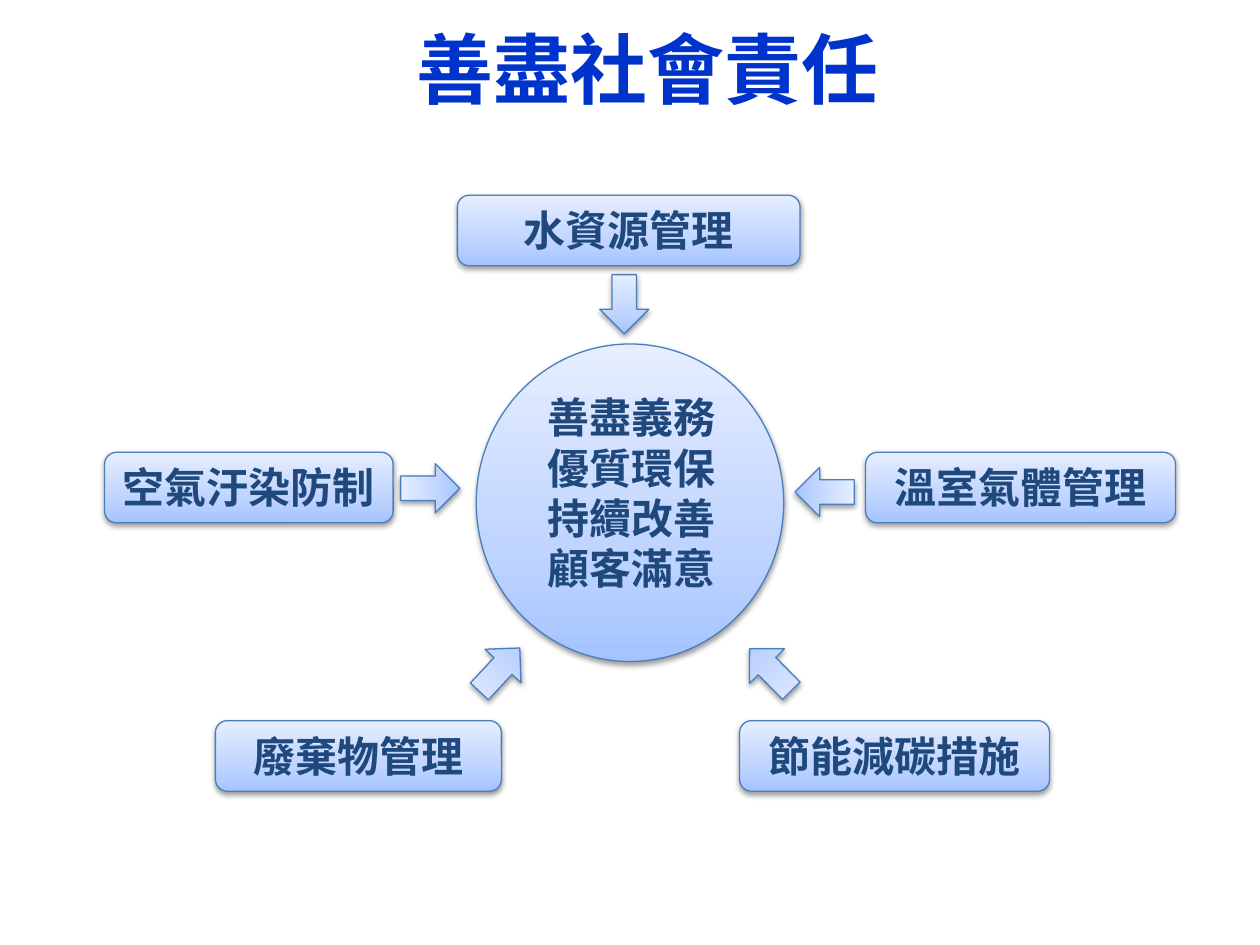
import copy

import pptx
import pptx.dml.color
import pptx.enum.shapes
import pptx.enum.text
import pptx.oxml
import pptx.oxml.ns
import pptx.util

Inches = pptx.util.Inches
Pt = pptx.util.Pt
RGBColor = pptx.dml.color.RGBColor
SHAPE = pptx.enum.shapes.MSO_SHAPE
ANCHOR = pptx.enum.text.MSO_ANCHOR
AUTO_SIZE = pptx.enum.text.MSO_AUTO_SIZE
CENTER = pptx.enum.text.PP_ALIGN.CENTER

TITLE_BLUE = RGBColor(0x00, 0x33, 0xCC)
NAVY = RGBColor(0x1F, 0x49, 0x7D)
OUTLINE = RGBColor(0x4B, 0x7E, 0xBC)
GRADIENT = [
    (0, RGBColor(0xA4, 0xC4, 0xFF)),
    (0.35, RGBColor(0xBF, 0xD4, 0xFF)),
    (1, RGBColor(0xE6, 0xEE, 0xFF)),
]
SHADOW = (
    f'<a:outerShdw {pptx.oxml.ns.nsdecls("a")} blurRad="40000" dist="20000" '
    'dir="5400000" rotWithShape="0"><a:srgbClr val="000000">'
    '<a:alpha val="38000"/></a:srgbClr></a:outerShdw>'
)

TITLE_FONT = {"size": Pt(44), "color": TITLE_BLUE}
LABEL_FONT = {"size": Pt(24), "color": NAVY}
TITLE_FRAME = {
    "word_wrap": True, "vertical_anchor": ANCHOR.MIDDLE,
    "margin_left": 0, "margin_right": 0, "margin_top": Inches(0.05), "margin_bottom": 0,
}
LABEL_FRAME = {
    "word_wrap": True, "vertical_anchor": ANCHOR.TOP,
    "auto_size": AUTO_SIZE.SHAPE_TO_FIT_TEXT,
}

BOX_HEIGHT = 0.56
TOPICS = [
    ("水資源管理", 3.63, 1.55, 2.72),
    ("空氣汙染防制", 0.83, 3.59, 2.29),
    ("廢棄物管理", 1.71, 5.72, 2.27),
    ("溫室氣體管理", 6.87, 3.59, 2.46),
    ("節能減碳措施", 5.87, 5.72, 2.46),
]
ARROW_SIZE = (0.39, 0.47)
ARROWS = [
    (4.76, 2.18, 0),
    (6.35, 3.67, 90),
    (3.22, 3.64, 270),
    (5.92, 5.08, 135.3),
    (3.77, 5.08, 223),
]
PRINCIPLES = ["善盡義務", "優質環保", "持續改善", "顧客滿意"]


class Diagram:
    """Hold the diagram's style and current slide, and draw its elements."""

    font_name = "Noto Sans CJK SC"

    def __init__(self, slide):
        self.slide = slide

    def fill_text(self, owner, lines, frame_format, font_format, line_spacing=None):
        frame = owner.text_frame
        for name, value in frame_format.items():
            setattr(frame, name, value)
        frame.text = "\n".join(lines)
        for paragraph in frame.paragraphs:
            paragraph.alignment = CENTER
            paragraph.line_spacing = line_spacing
            font = paragraph.runs[0].font
            for name, value in {"name": self.font_name, "bold": True,
                                "size": font_format["size"]}.items():
                setattr(font, name, value)
            font.color.rgb = font_format["color"]
        for latin in owner.element.findall(".//" + pptx.oxml.ns.qn("a:latin")):
            latin.addnext(pptx.oxml.parse_xml(
                f'<a:ea {pptx.oxml.ns.nsdecls("a")} typeface="{self.font_name}"/>'))

    def text(self, lines, place, frame_format, font_format, line_spacing=None):
        box = self.slide.shapes.add_textbox(*map(Inches, place))
        self.fill_text(box, lines, frame_format, font_format, line_spacing)

    def shape(self, kind, place, rotation=0):
        shape = self.slide.shapes.add_shape(kind, *map(Inches, place))
        shape.rotation = rotation
        shape.fill.gradient()
        shape.fill.gradient_angle = 90
        stops = shape.element.spPr.find(".//" + pptx.oxml.ns.qn("a:gsLst"))
        stops.append(copy.deepcopy(stops[0]))
        for stop, (position, color) in zip(shape.fill.gradient_stops, GRADIENT):
            stop.position = position
            stop.color.rgb = color
        shape.line.color.rgb = OUTLINE
        shape.line.width = Pt(0.75)
        shape.shadow.inherit = False
        effects = shape.element.spPr.find(pptx.oxml.ns.qn("a:effectLst"))
        effects.append(pptx.oxml.parse_xml(SHADOW))
        return shape

    def topic(self, label, left, top, width):
        box = self.shape(SHAPE.ROUNDED_RECTANGLE, (left, top, width, BOX_HEIGHT))
        self.fill_text(box, [label], LABEL_FRAME, LABEL_FONT)

    def arrow(self, left, top, rotation):
        self.shape(SHAPE.DOWN_ARROW, (left, top, *ARROW_SIZE), rotation)


def main():
    deck = pptx.Presentation()
    deck.slide_width, deck.slide_height = Inches(10), Inches(7.5)
    diagram = Diagram(deck.slides.add_slide(deck.slide_layouts[6]))

    diagram.text(["善盡社會責任"], (0.64, -0.01, 9, 0.94), TITLE_FRAME, TITLE_FONT, Pt(60))
    diagram.shape(SHAPE.OVAL, (3.78, 2.73, 2.44, 2.52))
    diagram.text(PRINCIPLES, (4.15, 3.06, 1.72, 1.72), LABEL_FRAME, LABEL_FONT)
    for topic in TOPICS:
        diagram.topic(*topic)
    for arrow in ARROWS:
        diagram.arrow(*arrow)

    deck.save("out.pptx")


if __name__ == "__main__":
    main()
